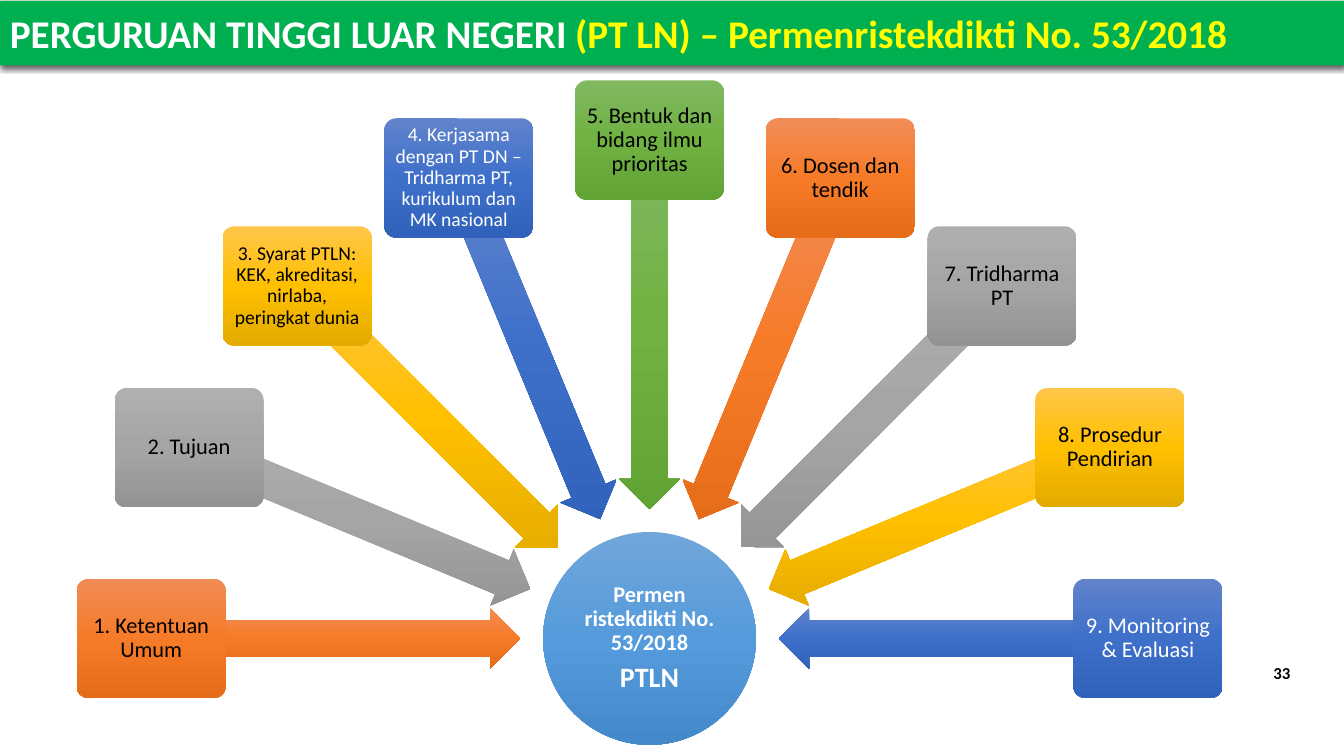
import math

import lxml.etree
import pptx
import pptx.dml.color
import pptx.enum.shapes
import pptx.enum.text
import pptx.oxml
import pptx.oxml.ns
import pptx.util

Pt = pptx.util.Pt
SHAPE = pptx.enum.shapes.MSO_SHAPE
ALIGN = pptx.enum.text.PP_ALIGN
FONT = "Calibri"
WHITE, BLACK = "FFFFFF", "000000"

HUB_BLUE = ("71A6DB", "559BDB", "448ACA")
ORANGE = ("F18C57", "F67B28", "E56C19")
GREY = ("AFAFAF", "A5A5A5", "939393")
GOLD = ("FFC64B", "FFC000", "E3AB00")
BLUE = ("6183CB", "3E70CA", "3062BB")
GREEN = ("81B861", "6FB242", "62A336")

TOPICS = [
    ("1. Ketentuan Umum", 16, BLACK, ORANGE),
    ("2. Tujuan", 16, BLACK, GREY),
    ("3. Syarat PTLN: KEK, akreditasi, nirlaba, peringkat dunia", 14, BLACK, GOLD),
    ("4. Kerjasama dengan PT DN – Tridharma PT, kurikulum dan MK nasional", 14, WHITE, BLUE),
    ("5. Bentuk dan bidang ilmu prioritas", 16, BLACK, GREEN),
    ("6. Dosen dan tendik", 16, BLACK, ORANGE),
    ("7. Tridharma PT", 16, BLACK, GREY),
    ("8. Prosedur Pendirian", 16, BLACK, GOLD),
    ("9. Monitoring & Evaluasi", 16, WHITE, BLUE),
]


def rgb(value):
    """Turn a hex string into a colour."""
    return pptx.dml.color.RGBColor.from_string(value)


def style_span(span, size, color, bold=False):
    """Give a run its font, size, colour and weight."""
    span.font.name = FONT
    span.font.size = Pt(size)
    span.font.bold = bold
    span.font.color.rgb = rgb(color)


def fill_gradient(shape, colors):
    """Shade a shape from top to bottom of the page, whatever its rotation."""
    shape.fill.gradient()
    shape.fill.gradient_angle = 270
    gradient = shape.element.spPr.find(pptx.oxml.ns.qn("a:gradFill"))
    gradient.set("rotWithShape", "0")
    stops = gradient.find(pptx.oxml.ns.qn("a:gsLst"))
    for stop in list(stops):
        stops.remove(stop)
    for position, color in zip((0, 50000, 100000), colors):
        stop = lxml.etree.SubElement(stops, pptx.oxml.ns.qn("a:gs"), pos=str(position))
        lxml.etree.SubElement(stop, pptx.oxml.ns.qn("a:srgbClr"), val=color)


def add_centred(page, kind, center, size, colors=None):
    """Add a plain shape around a centre point, shaded if colours are given."""
    (x, y), (width, height) = center, size
    shape = page.shapes.add_shape(
        kind, Pt(x - width / 2), Pt(y - height / 2), Pt(width), Pt(height))
    shape.shadow.inherit = False
    shape.line.fill.background()
    if colors:
        fill_gradient(shape, colors)
    return shape


def write_lines(shape, lines, color, margin, bold=False):
    """Write centred paragraphs of (text, size) inside a shape."""
    frame = shape.text_frame
    frame.word_wrap = True
    frame.vertical_anchor = pptx.enum.text.MSO_ANCHOR.MIDDLE
    frame.margin_left = frame.margin_right = Pt(margin)
    frame.margin_top = frame.margin_bottom = Pt(margin)
    frame.text = "\n".join(text for text, size in lines)
    for paragraph, (text, size) in zip(frame.paragraphs, lines):
        paragraph.alignment = ALIGN.CENTER
        paragraph.line_spacing = 0.9
        paragraph.space_after = Pt(round(size * 0.35, 1))
        style_span(paragraph.runs[0], size, color, bold)


def add_radial(page, center, radius):
    """Draw the hub and a half circle of topics whose arrows point at it."""
    hub = add_centred(page, SHAPE.OVAL, center, (152, 152), HUB_BLUE)
    write_lines(hub, [("Permen ristekdikti No. 53/2018", 16), ("PTLN", 20)], WHITE, 1, True)
    step = 180 / (len(TOPICS) - 1)
    for index, (text, size, color, colors) in enumerate(TOPICS):
        angle = 180 + index * step
        across, down = math.cos(math.radians(angle)), math.sin(math.radians(angle))

        def spot(distance):
            """Find the point at a distance from the hub along this spoke."""
            return center[0] + distance * across, center[1] + distance * down

        arrow = add_centred(page, SHAPE.LEFT_ARROW, spot(radius * 0.63), (264, 43.4), colors)
        arrow.adjustments[0] = 0.6
        arrow.adjustments[1] = 0.5
        arrow.rotation = angle % 360
        box = add_centred(page, SHAPE.ROUNDED_RECTANGLE, spot(radius), (106.5, 85.2), colors)
        box.adjustments[0] = 0.1
        write_lines(box, [(text, size)], color, 2.4)


def add_title(page, left, top, width, height):
    """Draw the green title bar with its soft shadow."""
    bar = add_centred(page, SHAPE.RECTANGLE,
                      (left + width / 2, top + height / 2), (width, height))
    bar.fill.solid()
    bar.fill.fore_color.rgb = rgb("00B050")
    effects = bar.element.spPr.find(pptx.oxml.ns.qn("a:effectLst"))
    effects.append(pptx.oxml.parse_xml(
        '<a:outerShdw xmlns:a="http://schemas.openxmlformats.org/drawingml/2006/main" '
        'blurRad="57150" dist="19050" dir="5400000" algn="ctr" rotWithShape="0">'
        '<a:srgbClr val="000000"><a:alpha val="63000"/></a:srgbClr></a:outerShdw>'))
    frame = bar.text_frame
    frame.word_wrap = True
    frame.vertical_anchor = pptx.enum.text.MSO_ANCHOR.MIDDLE
    paragraph = frame.paragraphs[0]
    paragraph.alignment = ALIGN.LEFT
    for text, color in (("PERGURUAN TINGGI LUAR NEGERI ", WHITE),
                        ("(PT LN) – Permenristekdikti No. 53/2018", "FFFF00")):
        span = paragraph.add_run()
        span.text = text
        style_span(span, 28, color, True)


def add_page_number(page, left, top, width, height):
    """Write the page number at the right of its box."""
    box = page.shapes.add_textbox(Pt(left), Pt(top), Pt(width), Pt(height))
    frame = box.text_frame
    frame.word_wrap = True
    frame.vertical_anchor = pptx.enum.text.MSO_ANCHOR.MIDDLE
    frame.text = "33"
    frame.paragraphs[0].alignment = ALIGN.RIGHT
    style_span(frame.paragraphs[0].runs[0], 12, BLACK, True)


def main():
    """Build the slide and save the deck."""
    deck = pptx.Presentation()
    deck.slide_width, deck.slide_height = Pt(960), Pt(540)
    page = deck.slides.add_slide(deck.slide_layouts[6])
    add_page_number(page, 712.8, 466, 216, 28.8)
    add_radial(page, (464, 456), 356)
    add_title(page, 0, 0.7, 960, 46)
    deck.save("out.pptx")


if __name__ == "__main__":
    main()
